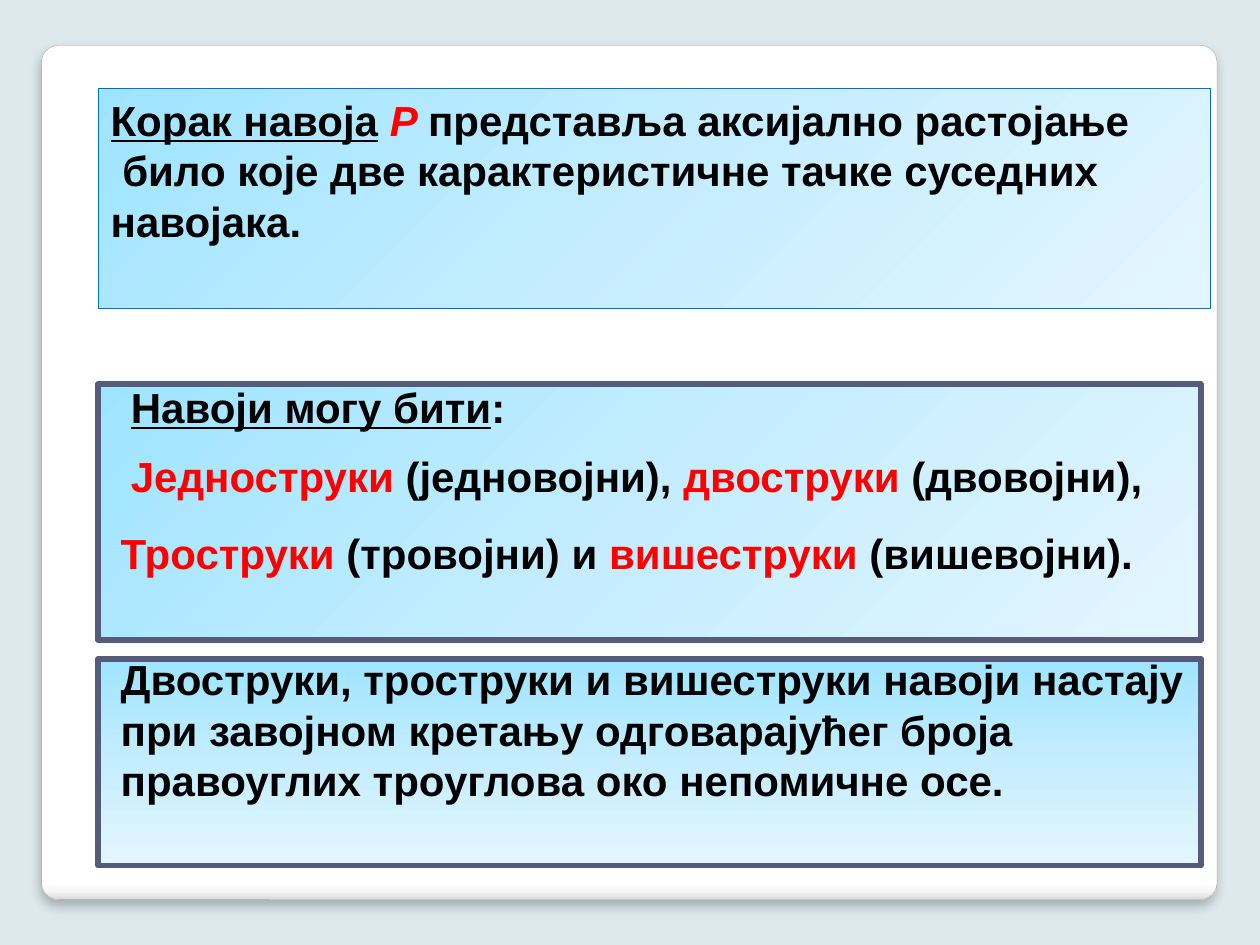
from dataclasses import dataclass

from lxml import etree
from pptx import Presentation
from pptx.dml.color import RGBColor
from pptx.enum.shapes import MSO_SHAPE
from pptx.enum.text import MSO_ANCHOR, PP_ALIGN
from pptx.oxml.ns import qn
from pptx.util import Inches, Pt

RECTANGLE, ROUNDED = MSO_SHAPE.RECTANGLE, MSO_SHAPE.ROUNDED_RECTANGLE
TOP, MIDDLE, LEFT = MSO_ANCHOR.TOP, MSO_ANCHOR.MIDDLE, PP_ALIGN.LEFT


@dataclass(frozen=True)
class Theme:
    font: str = "Arial"
    size: int = 24
    background: str = "DDE9EC"
    ink: str = "000000"
    accent: str = "FE0000"
    card_line: str = "A4A4A4"
    thin_line: str = "0070C0"
    thick_line: str = "545C79"
    card: tuple = ((0, "FFFFFF"), (98, "FFFFFF"), (99, "F7F7F7"), (100, "DADADA"))
    panel: tuple = ((0, "9FE4FF"), (50, "C5EDFF"), (100, "E3F6FF"))


THEME = Theme()

# Paragraphs are lists of (text, style); style letters: u underline, i italic, a accent colour
DEFINITION = [
    [("Корак навоја", "u"), (" ", ""), ("P ", "ai"), ("представља аксијално растојање", "")],
    [(" било које две карактеристичне тачке суседних навојака.", "")],
]
KINDS = [
    [("Навоји могу бити", "u"), (":", "")],
    [("Једноструки ", "a"), ("(једновојни), ", ""), ("двоструки ", "a"), ("(двовојни),", "")],
]
MORE_KINDS = [
    [("Троструки ", "a"), ("(тровојни) и ", ""), ("вишеструки ", "a"), ("(вишевојни).", "")],
]
ORIGIN = [
    [("Двоструки, троструки и вишеструки навоји настају при завојном кретању "
      "одговарајућег броја правоуглих троуглова око непомичне осе.", "")],
]

WIDTH, HEIGHT = 10, 7.5
PANEL_LEFT, PANEL_WIDTH = 0.78, 8.75
TEXT_LEFT, TEXT_WIDTH = 0.86, 8.67
CARD_BOX = (0.33, 0.36, 9.33, 6.78)
# box, gradient angle, line colour, line width
PANELS = [
    ((PANEL_LEFT, 5.23, PANEL_WIDTH, 1.64), 90, THEME.thick_line, 3.35),
    ((PANEL_LEFT, 3.05, PANEL_WIDTH, 2.03), 45, THEME.thick_line, 3.35),
    ((PANEL_LEFT, 0.7, 8.83, 1.75), 45, THEME.thin_line, 0.75),
]
# box, paragraphs, anchor, space between paragraphs
TEXTS = [
    ((0.94, 2.97, 8.52, 1.06), KINDS, MIDDLE, 10.5),
    ((TEXT_LEFT, 4.14, TEXT_WIDTH, 0.5), MORE_KINDS, TOP, 0),
    ((TEXT_LEFT, 5.14, TEXT_WIDTH, 1.31), ORIGIN, TOP, 0),
]


def rgb(value):
    return RGBColor.from_string(value)


def add_element(parent, tag, **attributes):
    values = {name: str(value) for name, value in attributes.items()}
    return etree.SubElement(parent, qn(tag), values)


def set_gradient(shape, stops, angle):
    """Fill with any number of stops; the angle runs clockwise."""
    shape.fill.gradient()
    gradient = shape._element.spPr.find(qn("a:gradFill"))
    for child in list(gradient):
        gradient.remove(child)
    stop_list = add_element(gradient, "a:gsLst")
    for position, color in stops:
        stop = add_element(stop_list, "a:gs", pos=position * 1000)
        add_element(stop, "a:srgbClr", val=color)
    add_element(gradient, "a:lin", ang=angle * 60000, scaled=0)


def add_panel(slide, kind, box, stops, angle, line_color, line_width):
    shape = slide.shapes.add_shape(kind, *map(Inches, box))
    shape.shadow.inherit = False
    set_gradient(shape, stops, angle)
    shape.line.color.rgb = rgb(line_color)
    shape.line.width = Pt(line_width)
    add_element(shape._element.spPr.find(qn("a:ln")), "a:round")
    return shape


def add_card(slide):
    card = add_panel(slide, ROUNDED, CARD_BOX, THEME.card, 90, THEME.card_line, 0.16)
    card.adjustments[0] = 0.02
    effects = card._element.spPr.find(qn("a:effectLst"))
    shadow = add_element(effects, "a:outerShdw", blurRad=Pt(6), dist=Pt(4),
                         dir=90 * 60000, algn="t", rotWithShape=0)
    color = add_element(shadow, "a:srgbClr", val=THEME.ink)
    add_element(color, "a:alpha", val=25000)


def write(shape, paragraphs, anchor=TOP, gap=0):
    frame = shape.text_frame
    frame.word_wrap = True
    frame.vertical_anchor = anchor
    for index, runs in enumerate(paragraphs):
        paragraph = frame.add_paragraph() if index else frame.paragraphs[0]
        paragraph.alignment = LEFT
        paragraph.space_before = Pt(gap if index else 0)
        for text, style in runs:
            run = paragraph.add_run()
            run.text = text
            font = run.font
            font.name, font.size, font.bold = THEME.font, Pt(THEME.size), True
            font.underline, font.italic = "u" in style, "i" in style
            font.color.rgb = rgb(THEME.accent if "a" in style else THEME.ink)


def main():
    presentation = Presentation()
    presentation.slide_width, presentation.slide_height = Inches(WIDTH), Inches(HEIGHT)
    slide = presentation.slides.add_slide(presentation.slide_layouts[6])
    slide.background.fill.solid()
    slide.background.fill.fore_color.rgb = rgb(THEME.background)

    add_card(slide)
    for box, angle, line_color, line_width in PANELS:
        panel = add_panel(slide, RECTANGLE, box, THEME.panel, angle, line_color, line_width)
    write(panel, DEFINITION)
    for box, paragraphs, anchor, gap in TEXTS:
        write(slide.shapes.add_textbox(*map(Inches, box)), paragraphs, anchor, gap)

    presentation.save("out.pptx")


if __name__ == "__main__":
    main()
